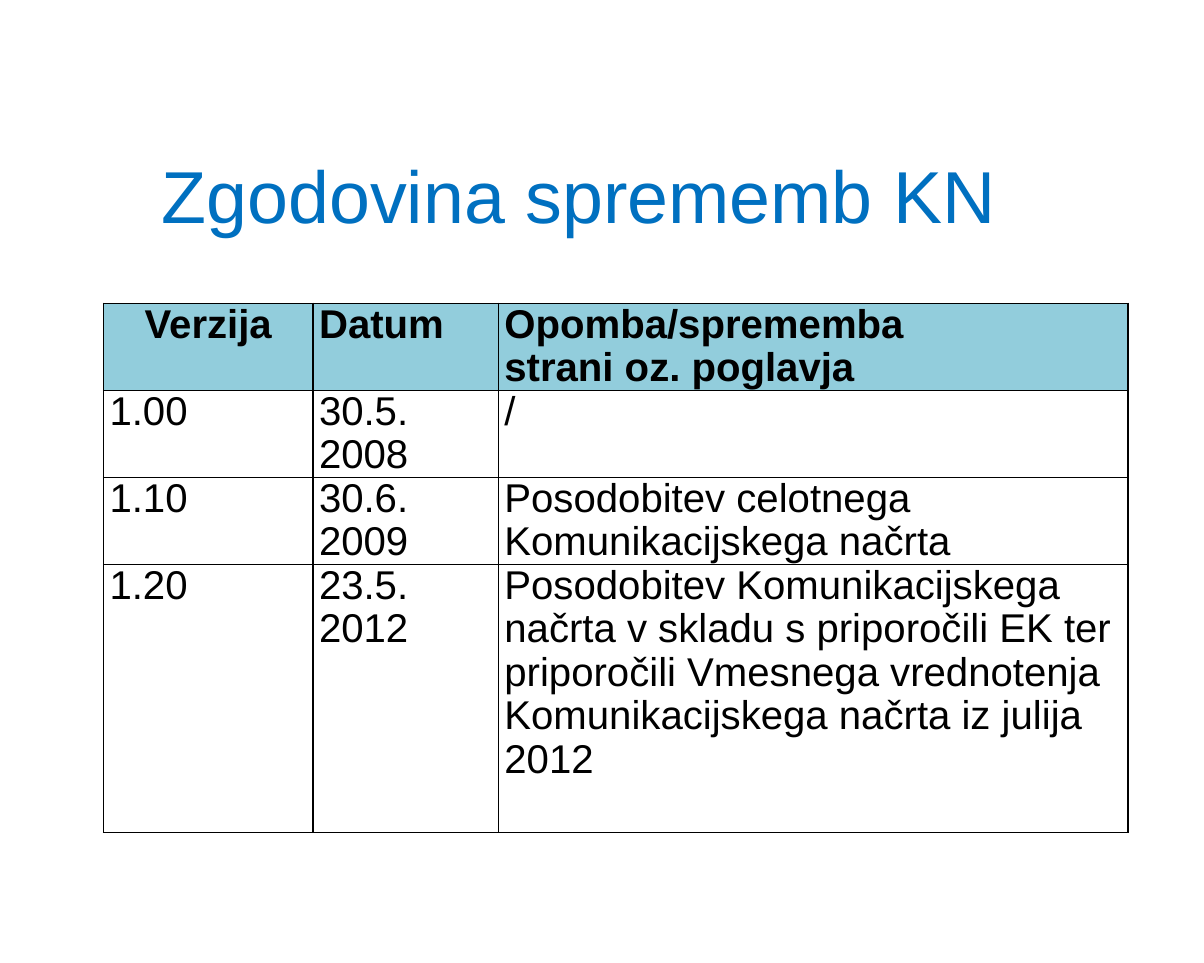
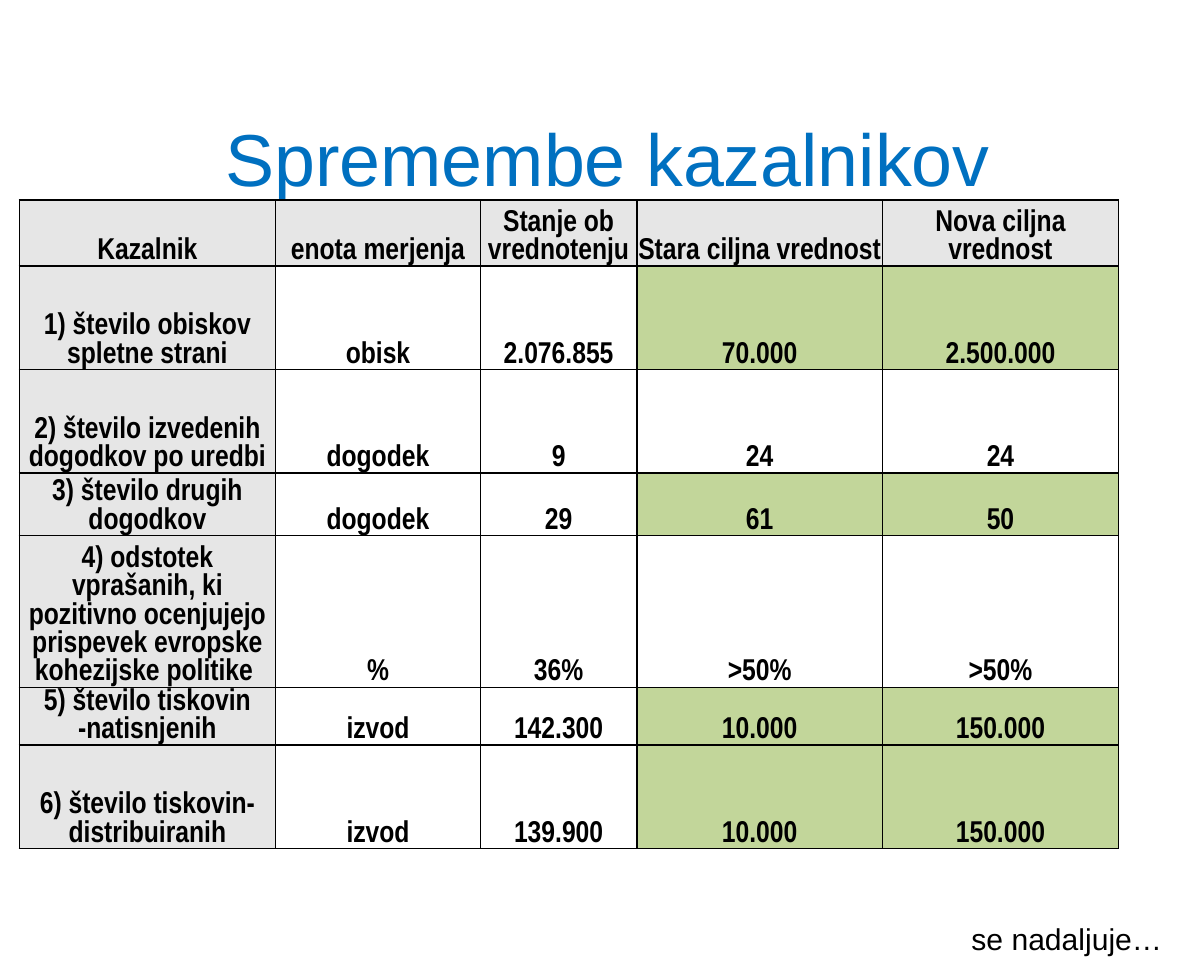
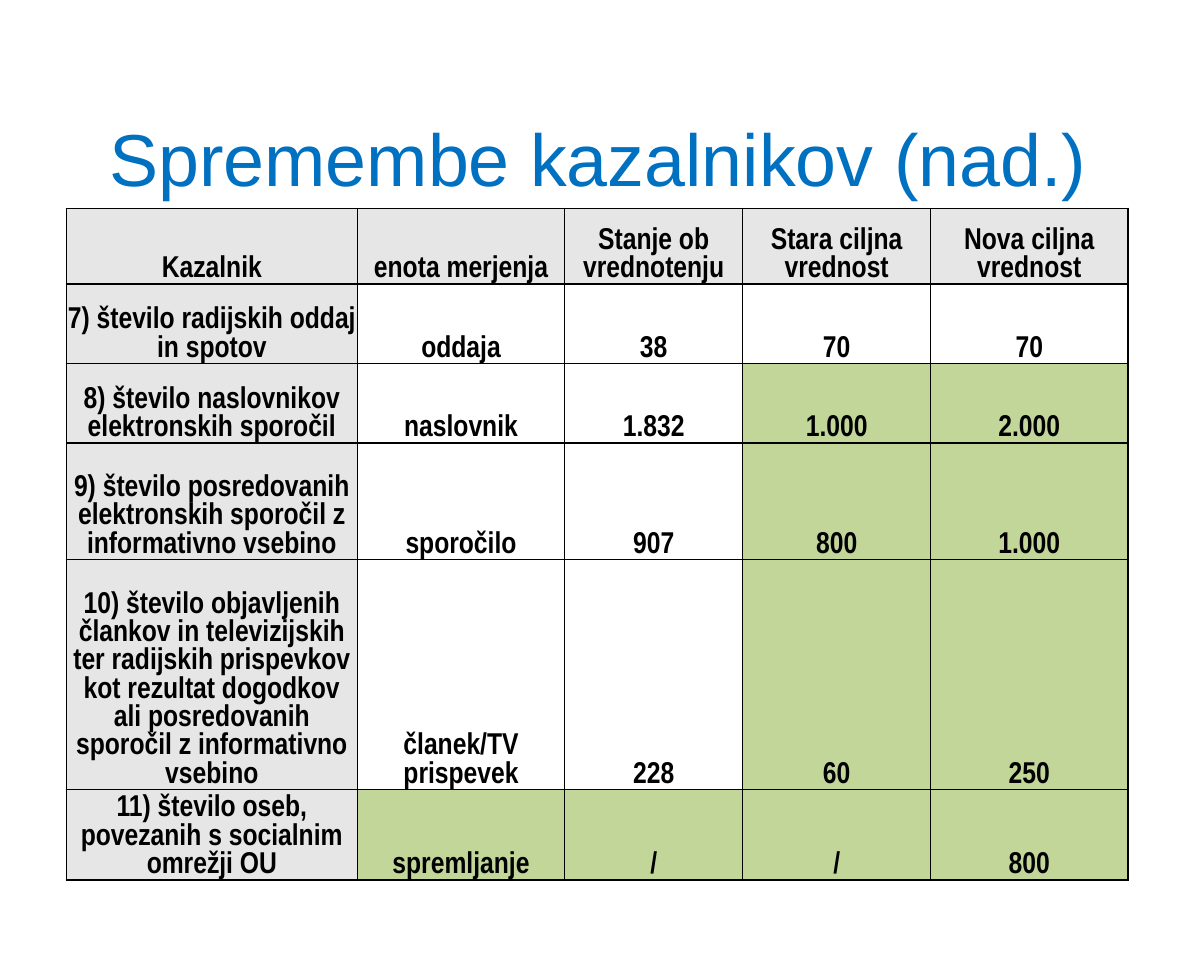
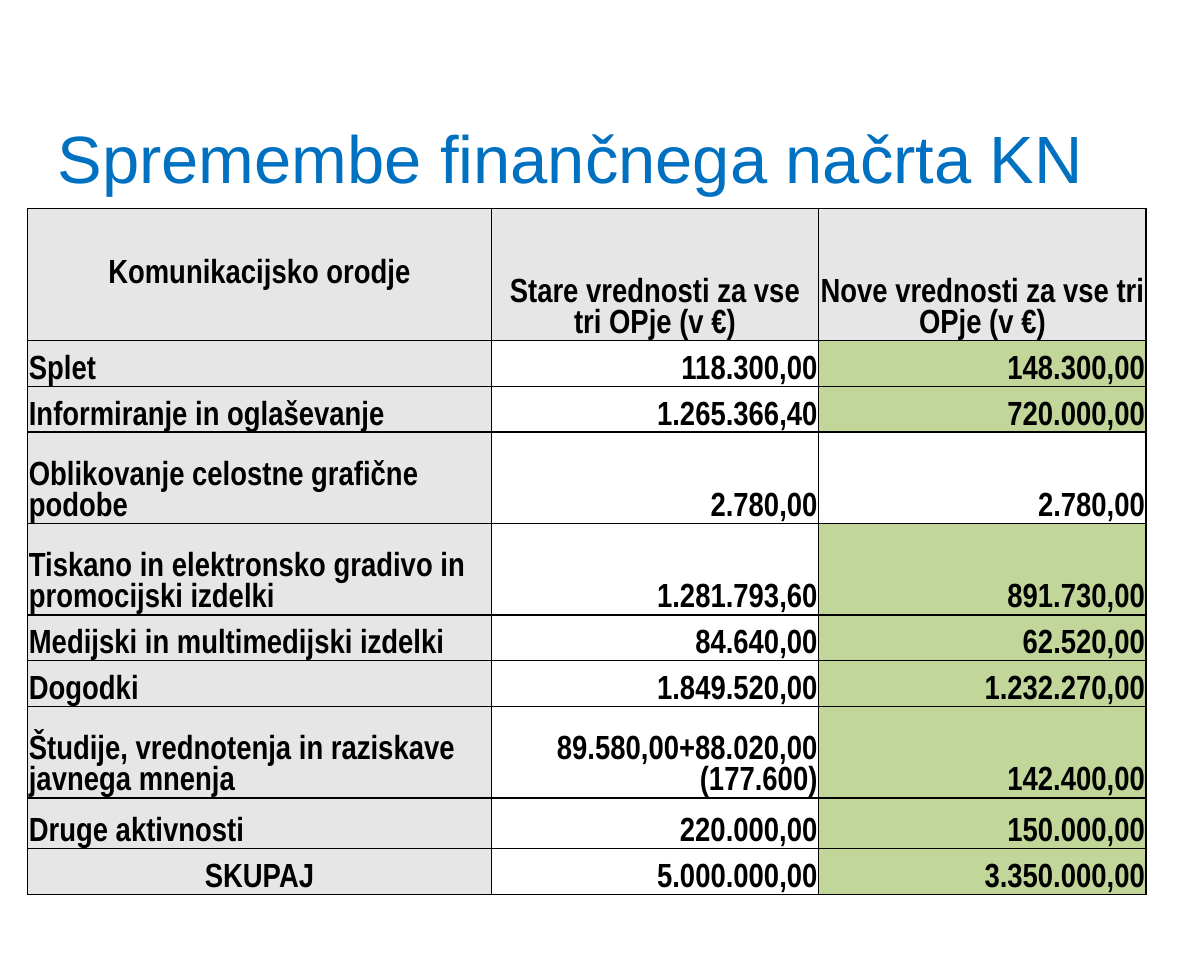
"""Build four slides on the changes to the communication plan."""
import pptx
import pptx.dml.color
import pptx.enum.text
import pptx.oxml
import pptx.oxml.ns
import pptx.util

Inches, Pt = pptx.util.Inches, pptx.util.Pt
ALIGN = pptx.enum.text.PP_ALIGN
ANCHOR = pptx.enum.text.MSO_ANCHOR

THEME = {
    "title": {"name": "Arial", "size": 44, "color": "0070C0", "bold": False},
    "long_title": {"name": "Arial", "size": 40, "color": "0070C0", "bold": False},
    "history": {"name": "Arial", "size": 24, "color": "000000", "bold": False},
    "indicator": {"name": "Arial Narrow", "size": 18, "color": "000000", "bold": True},
    "finance": {"name": "Arial Narrow", "size": 20, "color": "000000", "bold": True},
    "note": {"name": "Arial", "size": 18, "color": "000000", "bold": False},
    "aqua": "92CDDC", "grey": "E6E6E6", "green": "C2D69A", "border": "000000",
}
ROOMY = {"margin_left": 0.05, "margin_right": 0.05, "margin_top": 0, "margin_bottom": 0}
TIGHT = {"margin_left": 0.01, "margin_right": 0.01, "margin_top": 0.01, "margin_bottom": 0}
INDICATOR_HEADER = ["Kazalnik", "enota merjenja", "Stanje ob vrednotenju",
                    "Stara ciljna vrednost", "Nova ciljna vrednost"]

SLIDES = [
    {"title": "Zgodovina sprememb KN", "title_at": (0.31, 0.95, 9), "title_font": "title",
     "kind": "history", "at": (0.86, 2.52),
     "columns": [1.74, 1.54, 5.23], "heights": [0.72, 0.72, 0.72, 2.23],
     "rows": [
         ["Verzija", "Datum", "Opomba/sprememba\nstrani oz. poglavja"],
         ["1.00", "30.5.\n2008", "/"],
         ["1.10", "30.6.\n2009", "Posodobitev celotnega\nKomunikacijskega načrta"],
         ["1.20", "23.5.\n2012",
          "Posodobitev Komunikacijskega\nnačrta v skladu s priporočili EK ter\n"
          "priporočili Vmesnega vrednotenja\nKomunikacijskega načrta iz julija\n2012"],
     ]},
    {"title": "Spremembe kazalnikov", "title_at": (0.55, 0.64, 9), "title_font": "title",
     "kind": "indicator", "at": (0.16, 1.66), "note": "se nadaljuje…",
     "columns": [2.13, 1.7, 1.3, 2.04, 1.96],
     "heights": [0.55, 0.86, 0.86, 0.52, 1.26, 0.48, 0.86],
     "rows": [
         INDICATOR_HEADER,
         ["1) število obiskov spletne strani", "obisk", "2.076.855", "70.000", "2.500.000"],
         ["2) število izvedenih dogodkov po uredbi", "dogodek", "9", "24", "24"],
         ["3) število drugih dogodkov", "dogodek", "29", "61", "50"],
         ["4) odstotek vprašanih, ki pozitivno ocenjujejo prispevek evropske "
          "kohezijske politike ", "%", "36%", ">50%", ">50%"],
         ["5) število tiskovin -natisnjenih", "izvod", "142.300", "10.000", "150.000"],
         ["6) število tiskovin- distribuiranih", "izvod", "139.900", "10.000", "150.000"],
     ]},
    {"title": "Spremembe kazalnikov (nad.)", "title_at": (0.47, 0.64, 9), "title_font": "title",
     "kind": "indicator", "at": (0.55, 1.73),
     "columns": [2.42, 1.72, 1.48, 1.56, 1.64],
     "heights": [0.63, 0.66, 0.66, 0.97, 1.91, 0.75],
     "rows": [
         INDICATOR_HEADER,
         ["7) število radijskih oddaj in spotov", "oddaja", "38", "70", "70"],
         ["8) število naslovnikov elektronskih sporočil", "naslovnik", "1.832", "1.000", "2.000"],
         ["9) število posredovanih elektronskih sporočil z informativno vsebino",
          "sporočilo", "907", "800", "1.000"],
         ["10) število objavljenih člankov in televizijskih ter radijskih prispevkov kot "
          "rezultat dogodkov ali posredovanih sporočil z informativno vsebino",
          "članek/TV prispevek", "228", "60", "250"],
         ["11) število oseb, povezanih s socialnim omrežji OU", "spremljanje", "/", "/", "800"],
     ]},
    {"title": "Spremembe finančnega načrta KN", "title_at": (0, 0.64, 9.47),
     "title_font": "long_title", "kind": "finance", "at": (0.23, 1.73),
     "columns": [3.85, 2.72, 2.72],
     "heights": [1.1, 0.38, 0.38, 0.76, 0.76, 0.38, 0.38, 0.76, 0.42, 0.38],
     "rows": [
         ["Komunikacijsko orodje", "Stare vrednosti za vse tri OPje (v €)",
          "Nove vrednosti za vse tri OPje (v €)"],
         ["Splet", "118.300,00", "148.300,00"],
         ["Informiranje in oglaševanje", "1.265.366,40", "720.000,00"],
         ["Oblikovanje celostne grafične podobe", "2.780,00", "2.780,00"],
         ["Tiskano in elektronsko gradivo in promocijski izdelki", "1.281.793,60", "891.730,00"],
         ["Medijski in multimedijski izdelki", "84.640,00", "62.520,00"],
         ["Dogodki", "1.849.520,00", "1.232.270,00"],
         ["Študije, vrednotenja in raziskave javnega mnenja",
          "89.580,00+88.020,00 (177.600)", "142.400,00"],
         ["Druge aktivnosti", "220.000,00", "150.000,00"],
         ["SKUPAJ", "5.000.000,00", "3.350.000,00"],
     ]},
]


def write(frame, text, style, align, **overrides):
    """Fill a text frame with one paragraph per line of text."""
    values = {**THEME[style], **overrides}
    color = pptx.dml.color.RGBColor.from_string(values.pop("color"))
    values["size"] = Pt(values["size"])
    frame.text = text
    frame.word_wrap = True
    for para in frame.paragraphs:
        para.alignment = align
        for span in para.runs:
            for name, value in values.items():
                setattr(span.font, name, value)
            span.font.color.rgb = color


def add_borders(cell):
    """Draw a one-point line on each side of a cell."""
    properties = cell._tc.get_or_add_tcPr()
    for side in ("lnL", "lnR", "lnT", "lnB"):
        properties.append(pptx.oxml.parse_xml(
            f'<a:{side} {pptx.oxml.ns.nsdecls("a")} w="{Pt(1)}"><a:solidFill>'
            f'<a:srgbClr val="{THEME["border"]}"/></a:solidFill></a:{side}>'))


def cell_fill(kind, row, row_index, column):
    """Return the fill of a cell: heading, changed value or none."""
    if kind == "history":
        return THEME["aqua"] if row_index == 0 else None
    if row_index == 0 or column == 0:
        return THEME["grey"]
    old, new = row[-2:]
    first_changed = 1 if old == "/" else len(row) - (1 if kind == "finance" else 2)
    return THEME["green"] if old != new and column >= first_changed else None


def cell_align(kind, text, row_index, column):
    """Return the alignment of a cell."""
    if kind == "history":
        return ALIGN.CENTER if row_index == column == 0 else ALIGN.LEFT
    if kind == "indicator" or row_index == 0 or text == "SKUPAJ":
        return ALIGN.CENTER
    return ALIGN.LEFT if column == 0 else ALIGN.RIGHT


def format_cell(cell, kind, row, row_index, column):
    """Write and format one table cell."""
    history = kind == "history"
    for name, value in (ROOMY if history else TIGHT).items():
        setattr(cell, name, Inches(value))
    centred = kind == "finance" and row_index == column == 0
    cell.vertical_anchor = (ANCHOR.TOP if history else
                            ANCHOR.MIDDLE if centred else ANCHOR.BOTTOM)
    text = row[column]
    write(cell.text_frame, text, kind, cell_align(kind, text, row_index, column),
          bold=not history or row_index == 0)
    if history:
        for para in cell.text_frame.paragraphs:
            para.line_spacing = Pt(26)
    add_borders(cell)
    color = cell_fill(kind, row, row_index, column)
    if color:
        cell.fill.solid()
        cell.fill.fore_color.rgb = pptx.dml.color.RGBColor.from_string(color)
    else:
        cell.fill.background()


def add_grid(page, content):
    """Add the table of a slide."""
    rows, columns, heights = (content[key] for key in ("rows", "columns", "heights"))
    area = (*content["at"], sum(columns), sum(heights))
    table = page.shapes.add_table(len(rows), len(columns), *map(Inches, area)).table
    table.first_row = table.horz_banding = False
    for column, width in zip(table.columns, columns):
        column.width = Inches(width)
    for row_index, (row, height) in enumerate(zip(rows, heights)):
        table.rows[row_index].height = Inches(height)
        for column in range(len(columns)):
            format_cell(table.cell(row_index, column), content["kind"], row, row_index, column)


def add_page(deck, content):
    """Add one slide with its title, table and optional note."""
    page = deck.slides.add_slide(deck.slide_layouts[5])
    title = page.shapes.title
    left, top, width = content["title_at"]
    for name, value in {"left": left, "top": top, "width": width, "height": 1.33}.items():
        setattr(title, name, Inches(value))
    title.text_frame.vertical_anchor = ANCHOR.MIDDLE
    write(title.text_frame, content["title"], content["title_font"], ALIGN.CENTER)
    add_grid(page, content)
    if "note" in content:
        box = page.shapes.add_textbox(*map(Inches, (7.97, 7.6, 2.03, 0.4)))
        write(box.text_frame, content["note"], "note", ALIGN.LEFT)


def main():
    """Build and save the deck."""
    deck = pptx.Presentation()
    deck.slide_width, deck.slide_height = Inches(10), Inches(8)
    for content in SLIDES:
        add_page(deck, content)
    deck.save("out.pptx")


if __name__ == "__main__":
    main()
